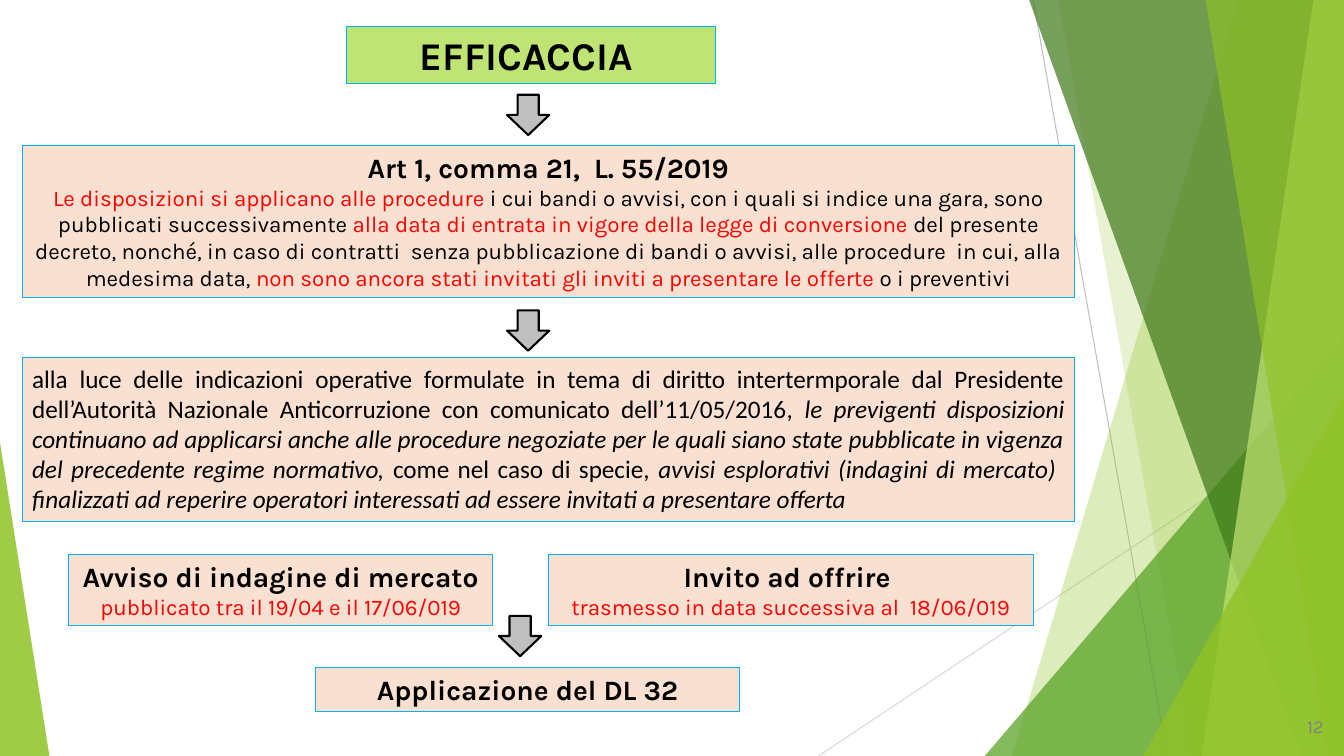
from dataclasses import dataclass
from typing import NamedTuple

import pptx
import pptx.dml.color
import pptx.enum.shapes
import pptx.enum.text
import pptx.oxml.ns
import pptx.oxml.xmlchemy
import pptx.util

Pt = pptx.util.Pt
SHAPES = pptx.enum.shapes.MSO_SHAPE
ALIGN = pptx.enum.text.PP_ALIGN
ANCHOR = pptx.enum.text.MSO_ANCHOR

WIDTH, HEIGHT = 960, 540
BLACK, RED, CYAN, PEACH = "000000", "FF0000", "00B0F0", "FAE0D1"
LEAF, LIME, GREY = "90C226", "C0E474", "BFBFBF"


class Run(NamedTuple):
    text: str
    size: float = 16
    color: str = BLACK
    bold: bool = False
    italic: bool = False
    font: str = "Karla"


@dataclass
class Ray:
    begin: tuple[float, float]
    end: tuple[float, float]
    color: str


@dataclass
class Facet:
    """A translucent panel from the slide's top to its bottom, ending at the right edge."""
    top_left: float
    bottom_left: float
    color: str
    opacity: int


@dataclass
class Wedge:
    """A translucent right triangle standing on the slide's bottom edge."""
    left: float
    width: float
    height: float
    apex: float
    color: str
    opacity: int


@dataclass
class Box:
    left: float
    top: float
    width: float
    height: float
    paragraphs: list[list[Run]]
    fill: str = PEACH
    align: ALIGN = ALIGN.CENTER


def heading(text: str) -> list[Run]:
    return [Run(text, 20, bold=True)]


def body(text: str, italic: bool = False) -> Run:
    return Run(text, 18, italic=italic, font="Calibri")


RAYS = [Ray((738, 0), (833.76, HEIGHT), GREY), Ray((WIDTH, 290.16), (584.64, HEIGHT), "D9D9D9")]
BACKDROP = [
    Facet(884.16, 722.88, LEAF, 30),
    Facet(756, 851.76, LEAF, 20),
    Wedge(703.44, 256.56, 300.24, 1, "54A021", 72),
    Facet(735.12, 929.52, "3F7819", 70),
    Facet(938.16, 858.24, LIME, 70),
    Facet(861.12, 948.96, LEAF, 65),
    Wedge(816.48, 143.52, 257.04, 1, LEAF, 80),
    Wedge(0, 35.28, 223.92, 0, LEAF, 85),
]
ARROW_POSITIONS = [(362.16, 67.68), (362.16, 221.76), (356.4, 439.92)]
ARROW_WIDTH, ARROW_HEIGHT = 30.24, 28.8

BOXES = [
    Box(247.68, 18.72, 263.52, 41.04, [[Run("EFFICACCIA ", 28, bold=True)]], LIME),
    Box(15.84, 103.68, 751.68, 108.72, [
        heading("Art 1, comma 21,  L. 55/2019"),
        [
            Run("Le disposizioni si applicano alle procedure ", color=RED),
            Run("i cui bandi o avvisi, con i quali si indice una gara, sono pubblicati successivamente "),
            Run("alla data di entrata in vigore della legge di conversione ", color=RED),
            Run("del presente decreto, nonché, in caso di contratti  senza pubblicazione di bandi "
                "o avvisi, alle procedure  in cui, alla medesima data, "),
            Run("non sono ancora stati invitati gli inviti a presentare le offerte ", color=RED),
            Run("o i preventivi"),
        ],
    ]),
    Box(15.84, 255.6, 751.68, 116.64, [[
        body("alla luce delle indicazioni operative formulate in tema di diritto intertermporale "
             "dal Presidente dell’Autorità Nazionale Anticorruzione con comunicato dell’11/05/2016"),
        body(", le previgenti disposizioni continuano ad applicarsi anche alle procedure negoziate "
             "per le quali siano state pubblicate in vigenza del precedente regime normativo, ", True),
        body("come nel caso di specie"),
        body(", avvisi esplorativi (indagini di mercato)  finalizzati ad reperire operatori "
             "interessati ad essere invitati a presentare offerta", True),
    ]], align=ALIGN.JUSTIFY),
    Box(48.96, 396, 303.12, 51.12, [
        heading("Avviso di indagine di mercato"),
        [Run("pubblicato tra il 19/04 e il 17/06/019", color=RED)],
    ]),
    Box(391.68, 396, 346.32, 51.12, [
        heading("Invito ad offrire "),
        [Run("trasmesso in data successiva al  18/06/019", color=RED)],
    ]),
    Box(225.36, 476.64, 303.12, 31.68, [heading("Applicazione del DL 32")]),
]


def rgb(color: str) -> pptx.dml.color.RGBColor:
    return pptx.dml.color.RGBColor.from_string(color)


def paint(shape, fill: str, line: str | None = None, line_width: float = 0.75) -> None:
    shape.shadow.inherit = False
    shape.fill.solid()
    shape.fill.fore_color.rgb = rgb(fill)
    if line is None:
        shape.line.fill.background()
    else:
        shape.line.color.rgb = rgb(line)
        shape.line.width = Pt(line_width)


def set_opacity(shape, percent: int) -> None:
    color = shape.element.spPr.find(".//" + pptx.oxml.ns.qn("a:srgbClr"))
    alpha = pptx.oxml.xmlchemy.OxmlElement("a:alpha")
    alpha.set("val", str(percent * 1000))
    color.append(alpha)


def draw_ray(slide, ray: Ray) -> None:
    points = [Pt(value) for value in (*ray.begin, *ray.end)]
    connector = slide.shapes.add_connector(pptx.enum.shapes.MSO_CONNECTOR.STRAIGHT, *points)
    connector.line.color.rgb = rgb(ray.color)
    connector.line.width = Pt(0.75)
    connector.element.spPr.append(pptx.oxml.xmlchemy.OxmlElement("a:effectLst"))


def draw_backdrop_part(slide, part: Facet | Wedge) -> None:
    if isinstance(part, Facet):
        builder = slide.shapes.build_freeform(Pt(part.top_left), 0)
        corners = [(WIDTH, 0), (WIDTH, HEIGHT), (part.bottom_left, HEIGHT)]
        builder.add_line_segments([(Pt(x), Pt(y)) for x, y in corners], close=True)
        shape = builder.convert_to_shape()
    else:
        shape = slide.shapes.add_shape(
            SHAPES.ISOSCELES_TRIANGLE, Pt(part.left), Pt(HEIGHT - part.height),
            Pt(part.width), Pt(part.height))
        shape.adjustments[0] = part.apex
    paint(shape, part.color)
    set_opacity(shape, part.opacity)


def write_paragraph(paragraph, runs: list[Run], align: ALIGN) -> None:
    paragraph.alignment = align
    for item in runs:
        run = paragraph.add_run()
        run.text = item.text
        formats = {"name": item.font, "size": Pt(item.size), "bold": item.bold, "italic": item.italic}
        for name, value in formats.items():
            setattr(run.font, name, value)
        run.font.color.rgb = rgb(item.color)


def draw_box(slide, box: Box) -> None:
    shape = slide.shapes.add_shape(
        SHAPES.RECTANGLE, Pt(box.left), Pt(box.top), Pt(box.width), Pt(box.height))
    paint(shape, box.fill, CYAN)
    frame = shape.text_frame
    formats = {"word_wrap": True, "vertical_anchor": ANCHOR.TOP,
               "auto_size": pptx.enum.text.MSO_AUTO_SIZE.SHAPE_TO_FIT_TEXT}
    for name, value in formats.items():
        setattr(frame, name, value)
    for index, runs in enumerate(box.paragraphs):
        paragraph = frame.add_paragraph() if index else frame.paragraphs[0]
        write_paragraph(paragraph, runs, box.align)


def draw_arrow(slide, left: float, top: float) -> None:
    arrow = slide.shapes.add_shape(
        SHAPES.DOWN_ARROW, Pt(left), Pt(top), Pt(ARROW_WIDTH), Pt(ARROW_HEIGHT))
    paint(arrow, GREY, BLACK, 1.5)


def draw_page_number(slide, number: str) -> None:
    frame = slide.shapes.add_textbox(Pt(898.56), Pt(504), Pt(54), Pt(28.8)).text_frame
    frame.word_wrap = True
    frame.vertical_anchor = ANCHOR.MIDDLE
    write_paragraph(frame.paragraphs[0], [Run(number, 13, "808080")], ALIGN.RIGHT)


def main() -> None:
    presentation = pptx.Presentation()
    presentation.slide_width, presentation.slide_height = Pt(WIDTH), Pt(HEIGHT)
    slide = presentation.slides.add_slide(presentation.slide_layouts[6])
    for ray in RAYS:
        draw_ray(slide, ray)
    for part in BACKDROP:
        draw_backdrop_part(slide, part)
    draw_page_number(slide, "12")
    for box in BOXES:
        draw_box(slide, box)
    for left, top in ARROW_POSITIONS:
        draw_arrow(slide, left, top)
    presentation.save("out.pptx")


if __name__ == "__main__":
    main()
